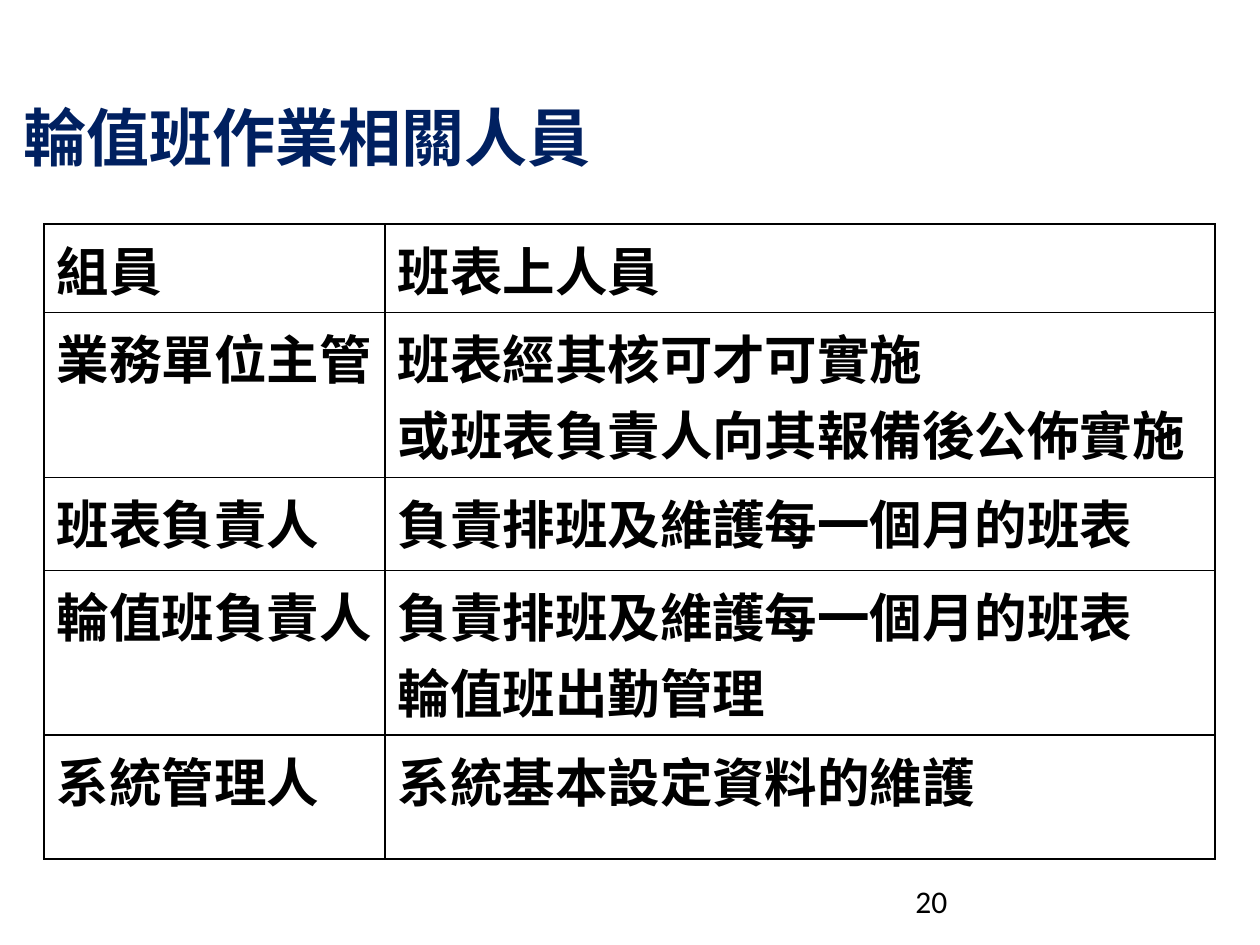
from lxml import etree
from pptx import Presentation
from pptx import util as u
from pptx.dml import color
from pptx.enum import text
from pptx.oxml import ns

PX_PER_INCH = 126
CJK = "Noto Sans CJK SC"
BLACK = "000000"
STAFF_ROLES = [
    ("組員", [("班表上人員", 0)], 69),
    ("業務單位主管", [("班表經其核可才可實施", 1), ("或班表負責人向其報備後公佈實施", 1)], 69),
    ("班表負責人", [("負責排班及維護每一個月的班表", 1)], 93),
    ("輪值班負責人", [("負責排班及維護每一個月的班表", 1), ("輪值班出勤管理", 0)], 124),
    ("系統管理人", [("系統基本設定資料的維護", 0)], 124),
]


def px(length):
    return u.Emu(round(length * u.Inches(1) / PX_PER_INCH))


def rgb(value):
    return color.RGBColor.from_string(value)


def style(paragraph, size, font_name, hex_color, bold=False):
    font = paragraph.font
    font.size = u.Pt(size)
    font.bold = bold
    font.color.rgb = rgb(hex_color)
    font.name = font_name
    defaults = paragraph._p.pPr.find(ns.qn("a:defRPr"))
    etree.SubElement(defaults, ns.qn("a:ea"), typeface=font_name)


def add_border(cell):
    properties = cell._tc.get_or_add_tcPr()
    for index, side in enumerate(("lnL", "lnR", "lnT", "lnB")):
        line = etree.Element(ns.qn(f"a:{side}"), w=str(u.Pt(1)))
        fill = etree.SubElement(line, ns.qn("a:solidFill"))
        etree.SubElement(fill, ns.qn("a:srgbClr"), val=BLACK)
        properties.insert(index, line)


def fill_cell(cell, lines):
    cell.fill.background()
    add_border(cell)
    frame = cell.text_frame
    frame.text = "\n".join(line for line, _ in lines)
    for paragraph, (_, level) in zip(frame.paragraphs, lines):
        paragraph.level = level
        properties = paragraph._p.get_or_add_pPr()
        properties.set("marL", "0")
        properties.set("indent", "0")
        style(paragraph, 30, CJK, BLACK, True)


def place_title(slide, left, top, width, height):
    title = slide.shapes.title
    title.left, title.top, title.width, title.height = map(px, (left, top, width, height))
    frame = title.text_frame
    frame.text = "輪值班作業相關人員"
    frame.auto_size = text.MSO_AUTO_SIZE.NONE
    frame.vertical_anchor = text.MSO_ANCHOR.MIDDLE
    heading = frame.paragraphs[0]
    heading.alignment = text.PP_ALIGN.LEFT
    style(heading, 36, CJK, "002060", True)


def place_roles(slide, left, top, width, height):
    holder = slide.shapes.add_table(
        len(STAFF_ROLES), 2, *map(px, (left, top, width, height)))
    roles = holder.table
    roles.first_row = False
    roles.horz_banding = False
    role_width = 341
    roles.columns[0].width = px(role_width)
    roles.columns[1].width = px(width - role_width)
    for row, (role, duties, row_height) in zip(roles.rows, STAFF_ROLES):
        row.height = px(row_height)
        fill_cell(row.cells[0], [(role, 0)])
        fill_cell(row.cells[1], duties)
    holder.height = px(height)


def place_page_number(slide, left, top, width, height):
    page_number = slide.shapes.add_textbox(*map(px, (left, top, width, height)))
    frame = page_number.text_frame
    frame.word_wrap = True
    frame.text = "20"
    style(frame.paragraphs[0], 18, "Calibri", BLACK)


def main():
    deck = Presentation()
    deck.slide_width, deck.slide_height = px(1260), px(945)
    slide = deck.slides.add_slide(deck.slide_layouts[5])
    place_title(slide, 11, 86, 1134, 100)
    place_roles(slide, 44, 224, 1171, 570)
    place_page_number(slide, 903, 876, 294, 50)
    deck.save("out.pptx")


if __name__ == "__main__":
    main()
